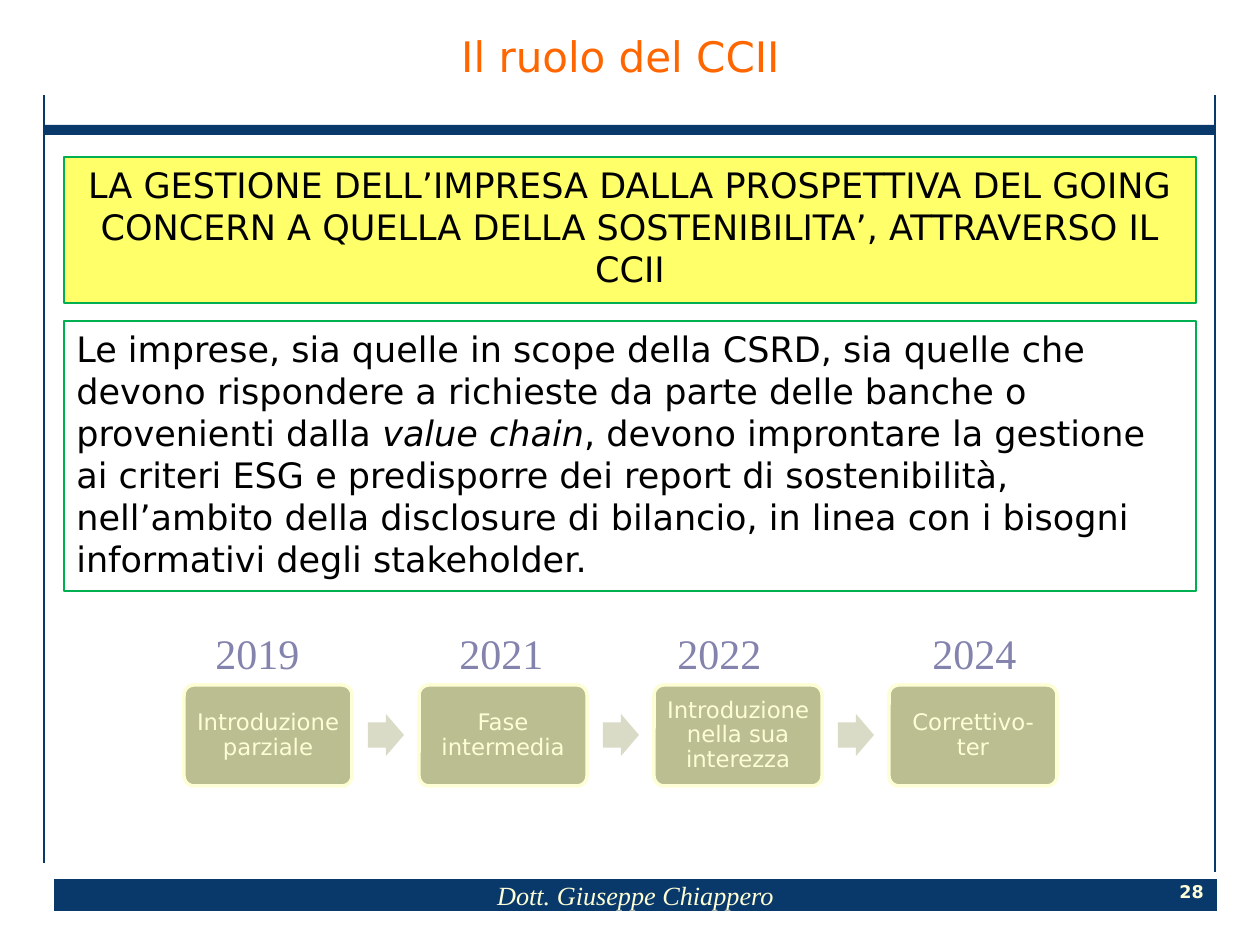
from pptx import Presentation
from pptx.dml.color import RGBColor
from pptx.enum.shapes import MSO_CONNECTOR, MSO_SHAPE
from pptx.enum.text import MSO_ANCHOR as ANCHOR, PP_ALIGN as ALIGN
from pptx.oxml.ns import qn
from pptx.util import Pt
from lxml.etree import SubElement

PX = 914400 / 126
SANS = "DejaVu Sans"
SERIF = "Times New Roman"
COLORS = {
    "navy": "09386A", "cream": "FEFED6", "orange": "FF6600",
    "yellow": "FFFF69", "green": "00B050", "black": "000000",
    "olive": "BABE90", "pale_olive": "D9DBC6", "lavender": "8383AD",
}
STEPS = [
    ("Introduzione parziale", "2019", 203),
    ("Fase intermedia", "2021", 447),
    ("Introduzione nella sua interezza", "2022", 665),
    ("Correttivo-ter", "2024", 920),
]
STEP_LEFT, STEP_PITCH = 184, 235


def px(value):
    return round(value * PX)


def color(name):
    return RGBColor.from_string(COLORS[name])


def add_box(slide, kind, bounds, fill=None, line=None, line_width=0.75):
    shape = slide.shapes.add_shape(kind, *map(px, bounds))
    shape.shadow.inherit = False
    if fill:
        shape.fill.solid()
        shape.fill.fore_color.rgb = color(fill)
    else:
        shape.fill.background()
    if line:
        shape.line.color.rgb = color(line)
        shape.line.width = Pt(line_width)
    else:
        shape.line.fill.background()
    return shape


def write(shape, runs, size, font_color, font=SANS, align=ALIGN.LEFT,
          anchor=ANCHOR.TOP, wrap=True, spacing=None, bold=False, margins=None):
    """Fill a shape with one paragraph of (text, italic) runs."""
    frame = shape.text_frame
    frame.word_wrap = wrap
    frame.vertical_anchor = anchor
    if margins:
        horizontal, vertical = map(px, margins)
        frame.margin_left = frame.margin_right = horizontal
        frame.margin_top = frame.margin_bottom = vertical
    paragraph = frame.paragraphs[0]
    paragraph.alignment = align
    if spacing:
        paragraph.line_spacing = spacing
    for text, italic in runs:
        run = paragraph.add_run()
        run.text = text
        run.font.size = Pt(size)
        run.font.name = font
        run.font.bold = bold
        run.font.italic = italic
        run.font.color.rgb = color(font_color)


def add_label(slide, bounds, text, size, font_color, **style):
    label = slide.shapes.add_textbox(*map(px, bounds))
    write(label, [(text, False)], size, font_color, **style)


def add_side_line(slide, x, top, bottom):
    line = slide.shapes.add_connector(
        MSO_CONNECTOR.STRAIGHT, px(x), px(top), px(x), px(bottom))
    line.line.color.rgb = color("navy")
    line.line.width = Pt(1)
    SubElement(line._element.spPr, qn("a:effectLst"))


def add_frame(slide):
    """Header bar, side lines, footer and page number."""
    add_box(slide, MSO_SHAPE.RECTANGLE, (44, 125, 1171, 10), "navy")
    footer = add_box(slide, MSO_SHAPE.RECTANGLE, (54, 879, 1163, 32), "navy")
    write(footer, [("Dott. Giuseppe Chiappero", True)], 15, "cream", font=SERIF,
          align=ALIGN.CENTER, anchor=ANCHOR.MIDDLE, margins=(12, 0))
    add_side_line(slide, 44, 95, 863)
    add_side_line(slide, 1215, 95, 872)
    add_label(slide, (1175, 879, 33, 26), "28", 10, "cream", bold=True,
              align=ALIGN.CENTER, anchor=ANCHOR.MIDDLE, wrap=False,
              margins=(0, 0))


def add_step(slide, index, text):
    left = STEP_LEFT + index * STEP_PITCH
    card = add_box(slide, MSO_SHAPE.ROUNDED_RECTANGLE, (left, 685, 168, 101),
                   "olive", "cream", 2)
    card.adjustments[0] = 0.1
    write(card, [(text, False)], 13, "cream", align=ALIGN.CENTER,
          anchor=ANCHOR.MIDDLE, spacing=0.9, margins=(6, 6))
    if index < len(STEPS) - 1:
        arrow = add_box(slide, MSO_SHAPE.RIGHT_ARROW, (left + 184, 714, 36, 42),
                        "pale_olive")
        arrow.adjustments[0] = 0.6
        arrow.adjustments[1] = 0.5


def main():
    presentation = Presentation()
    presentation.slide_width = px(1260)
    presentation.slide_height = px(945)
    slide = presentation.slides.add_slide(presentation.slide_layouts[6])

    add_frame(slide)
    add_label(slide, (25, 29, 1191, 63), "Il ruolo del CCII", 24, "orange",
              align=ALIGN.CENTER, anchor=ANCHOR.MIDDLE, wrap=False, spacing=0.8)

    thesis = add_box(slide, MSO_SHAPE.RECTANGLE, (64, 157, 1132, 146),
                     "yellow", "green")
    write(thesis, [("LA GESTIONE DELL’IMPRESA DALLA PROSPETTIVA DEL GOING "
                    "CONCERN A QUELLA DELLA SOSTENIBILITA’, ATTRAVERSO IL "
                    "CCII", False)], 20, "black", align=ALIGN.CENTER)

    for index, (text, year, year_left) in enumerate(STEPS):
        add_step(slide, index, text)
        add_label(slide, (year_left, 621, 129, 63), year, 24, "lavender",
                  font=SERIF)

    explanation = add_box(slide, MSO_SHAPE.RECTANGLE, (64, 321, 1132, 270),
                          line="green")
    write(explanation, [
        ("Le imprese, sia quelle in scope della CSRD, sia quelle che devono "
         "rispondere a richieste da parte delle banche o provenienti dalla ",
         False),
        ("value chain", True),
        (", devono improntare la gestione ai criteri ESG e predisporre dei "
         "report di sostenibilità, nell’ambito della disclosure di bilancio, "
         "in linea con i bisogni informativi degli stakeholder.", False),
    ], 20, "black")

    presentation.save("out.pptx")


if __name__ == "__main__":
    main()
